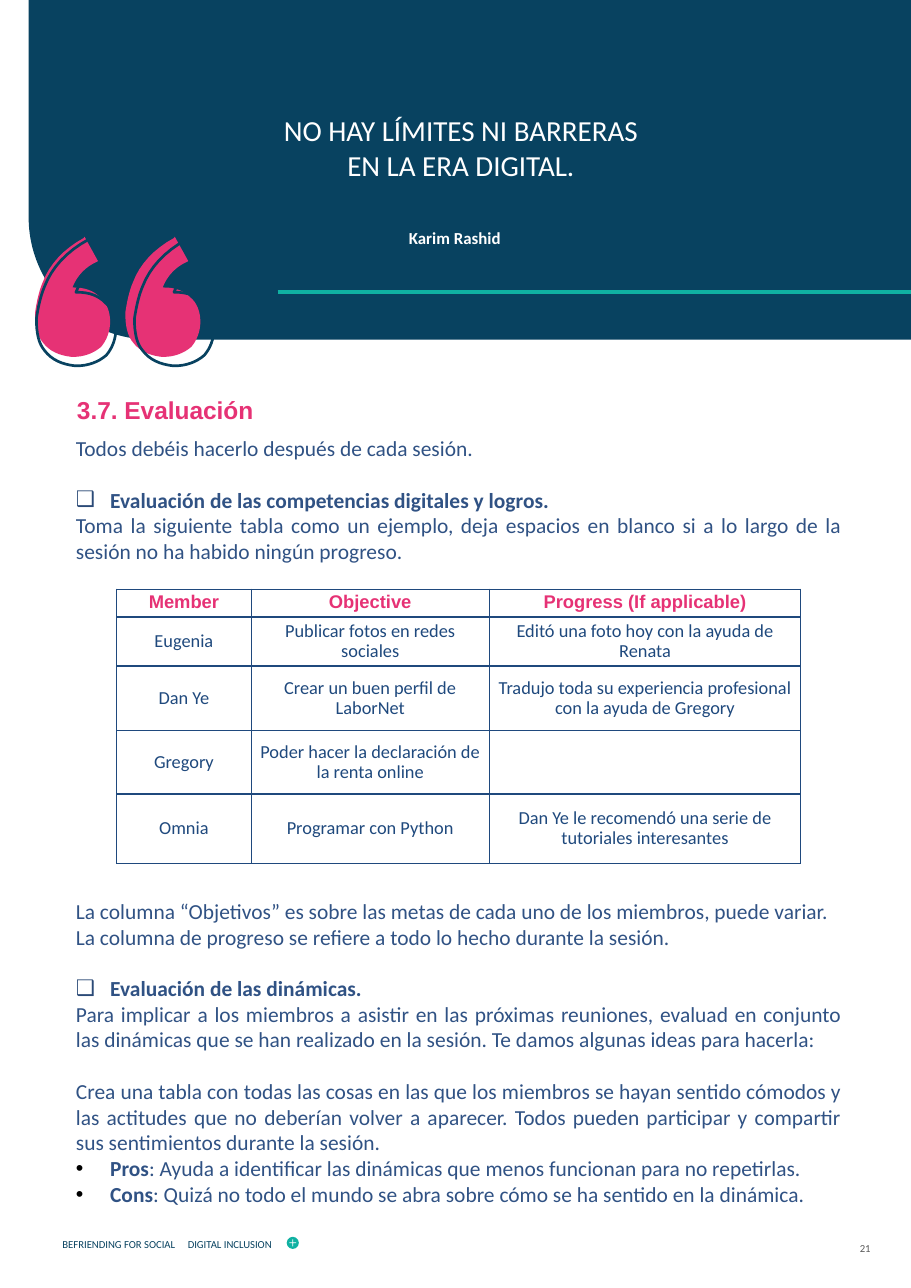
"""Builds the evaluation page of the digital inclusion guide."""
from lxml import etree
from pptx import Presentation
from pptx.dml.color import RGBColor
from pptx.enum.shapes import MSO_CONNECTOR, MSO_SHAPE
from pptx.enum.text import MSO_ANCHOR, PP_ALIGN
from pptx.oxml.ns import qn
from pptx.util import Cm, Pt

LEFT, CENTER, RIGHT = PP_ALIGN.LEFT, PP_ALIGN.CENTER, PP_ALIGN.RIGHT
JUSTIFY = PP_ALIGN.JUSTIFY
TOP, MIDDLE = MSO_ANCHOR.TOP, MSO_ANCHOR.MIDDLE
COLORS = {
    "navy": "084260", "teal": "10B1A2", "pink": "E63275", "white": "FFFFFF",
    "body": "305284", "table": "1F497D", "box": "2B4A77", "dot": "000000",
    "page": "595959",
}
BODY_LINE = Pt(16.8)
TITLE_ONLY = 5

QUOTE_MARK = [
    (0.89, 2.77), (0.86, 2.77, 0.86, 2.77, 0.84, 2.77),
    (0.56, 2.74, 0.33, 2.64, 0.18, 2.44), (0.05, 2.29, 0, 2.06, 0, 1.75),
    (0.03, 1.55, 0.08, 1.27, 0.18, 1.04), (0.33, 0.64, 0.66, 0.28, 1.12, 0.03),
    (1.14, 0), (1.45, 0.56), (1.42, 0.58),
    (1.17, 0.69, 0.97, 0.89, 0.86, 1.17), (0.89, 1.17),
    (1.14, 1.17, 1.35, 1.24, 1.5, 1.4), (1.65, 1.52, 1.73, 1.73, 1.73, 1.96),
    (1.73, 2.18, 1.65, 2.39, 1.52, 2.54), (1.35, 2.69, 1.12, 2.77, 0.89, 2.77),
]

BEFORE_TABLE = [
    ("", False, [("Todos debéis hacerlo después de cada sesión.", False)]),
    ("❑", True, [("Evaluación de las competencias digitales y logros.", True)]),
    ("", False, [("Toma la siguiente tabla como un ejemplo, deja espacios en blanco si a lo "
                  "largo de la sesión no ha habido ningún progreso.", False)]),
]
AFTER_TABLE = [
    ("", False, [("La columna “Objetivos” es sobre las metas de cada uno de los miembros, "
                  "puede variar.", False)]),
    ("", False, [("La columna de progreso se refiere a todo lo hecho durante la sesión.", False)]),
    ("❑", True, [("Evaluación de las dinámicas.", True)]),
    ("", False, [("Para implicar a los miembros a asistir en las próximas reuniones, evaluad en "
                  "conjunto las dinámicas que se han realizado en la sesión. Te damos algunas "
                  "ideas para hacerla:", False)]),
    ("", True, [("Crea una tabla con todas las cosas en las que los miembros se hayan sentido "
                 "cómodos y las actitudes que no deberían volver a aparecer. Todos pueden "
                 "participar y compartir sus sentimientos durante la sesión.", False)]),
    ("•", False, [("Pros", True), (": Ayuda a identificar las dinámicas que menos funcionan para "
                                   "no repetirlas.", False)]),
    ("•", False, [("Cons", True), (": Quizá no todo el mundo se abra sobre cómo se ha sentido en "
                                   "la dinámica.", False)]),
]

MEMBER_ROWS = [
    ("Member", "Objective", "Progress (If applicable)"),
    ("Eugenia", "Publicar fotos en redes sociales", "Editó una foto hoy con la ayuda de Renata"),
    ("Dan Ye", "Crear un buen perfil de LaborNet",
     "Tradujo toda su experiencia profesional con la ayuda de Gregory"),
    ("Gregory", "Poder hacer la declaración de la renta online", ""),
    ("Omnia", "Programar con Python", "Dan Ye le recomendó una serie de tutoriales interesantes"),
]
COLUMN_WIDTHS = (3.1, 5.49, 7.18)
ROW_HEIGHTS = (0.64, 1.13, 1.49, 1.46, 1.6)


def color(name):
    """Return the named colour."""
    return RGBColor.from_string(COLORS[name])


def add_span(para, text, size, tint, bold=False, font="Calibri"):
    """Add one formatted run to a paragraph."""
    span = para.add_run()
    span.text = text
    span.font.name, span.font.size, span.font.bold = font, Pt(size), bold
    span.font.color.rgb = color(tint)


def add_box(page, left, top, width, height, anchor=TOP):
    """Add a wrapping text box and return its text frame."""
    frame = page.shapes.add_textbox(Cm(left), Cm(top), Cm(width), Cm(height)).text_frame
    frame.word_wrap = True
    frame.vertical_anchor = anchor
    return frame


def add_label(page, place, lines, size, tint, align=LEFT, anchor=MIDDLE, bold=False):
    """Add a text box whose lines share one format."""
    frame = add_box(page, *place, anchor)
    for index, line in enumerate(lines):
        para = frame.add_paragraph() if index else frame.paragraphs[0]
        para.alignment = align
        add_span(para, line, size, tint, bold)


def add_bullet(para, symbol):
    """Give a paragraph a hanging bullet."""
    props = para._p.get_or_add_pPr()
    props.set("marL", str(Cm(0.79)))
    props.set("indent", str(-Cm(0.79)))
    tint = etree.SubElement(props, qn("a:buClr"))
    etree.SubElement(tint, qn("a:srgbClr"), val=COLORS["box" if symbol == "❑" else "dot"])
    etree.SubElement(props, qn("a:buFont"), typeface="Arial")
    etree.SubElement(props, qn("a:buChar"), char=symbol)


def add_body(page, top, height, items):
    """Add justified body text with bullets and gaps."""
    frame = add_box(page, 1.5, top, 18.16, height)
    for index, (symbol, gap, spans) in enumerate(items):
        para = frame.add_paragraph() if index else frame.paragraphs[0]
        if symbol:
            add_bullet(para, symbol)
        para.alignment = JUSTIFY
        para.line_spacing = BODY_LINE
        if gap:
            para.space_before = BODY_LINE
        for text, bold in spans:
            add_span(para, text, 14, "body", bold)


def add_solid(page, preset, left, top, width, height, tint):
    """Add a preset shape with a plain fill."""
    shape = page.shapes.add_shape(preset, Cm(left), Cm(top), Cm(width), Cm(height))
    shape.shadow.inherit = False
    shape.fill.solid()
    shape.fill.fore_color.rgb = color(tint)
    shape.line.fill.background()
    return shape


def trace(segments, steps=8):
    """Turn straight and cubic segments into a list of points."""
    points = [segments[0]]
    for segment in segments[1:]:
        if len(segment) == 2:
            points.append(segment)
            continue
        knots = [points[-1], segment[:2], segment[2:4], segment[4:]]
        for step in range(1, steps + 1):
            t = step / steps
            weights = ((1 - t) ** 3, 3 * t * (1 - t) ** 2, 3 * t * t * (1 - t), t ** 3)
            points.append(tuple(sum(w * knot[axis] for w, knot in zip(weights, knots))
                                for axis in (0, 1)))
    return points


def add_quote_mark(page, left, top, scale, outlined):
    """Add one opening quote mark, filled or outlined."""
    points = [(Cm(left + x * scale), Cm(top + y * scale)) for x, y in trace(QUOTE_MARK)]
    builder = page.shapes.build_freeform(*points[0])
    builder.add_line_segments(points[1:], close=True)
    mark = builder.convert_to_shape()
    mark.shadow.inherit = False
    if outlined:
        mark.fill.background()
        mark.line.color.rgb = color("navy")
        mark.line.width = Pt(1.75)
    else:
        mark.fill.solid()
        mark.fill.fore_color.rgb = color("pink")
        mark.line.fill.background()


def add_rule(page, left, right, y):
    """Add the teal rule of the banner."""
    rule = page.shapes.add_connector(MSO_CONNECTOR.STRAIGHT, Cm(left), Cm(y), Cm(right), Cm(y))
    rule.line.color.rgb = color("teal")
    rule.line.width = Pt(3)
    etree.SubElement(rule._element.spPr, qn("a:effectLst"))


def format_cell(cell, text, header):
    """Fill one table cell and draw its borders."""
    props = cell._tc.get_or_add_tcPr()
    for side in ("a:lnL", "a:lnR", "a:lnT", "a:lnB"):
        border = etree.SubElement(props, qn(side), w=str(Pt(1)))
        fill = etree.SubElement(border, qn("a:solidFill"))
        etree.SubElement(fill, qn("a:srgbClr"), val=COLORS["table"])
    cell.fill.background()
    cell.vertical_anchor = MIDDLE
    cell.margin_left = cell.margin_right = Cm(0.18)
    cell.margin_top = cell.margin_bottom = 0
    para = cell.text_frame.paragraphs[0]
    para.alignment = CENTER
    para.line_spacing = 0.9
    if text:
        add_span(para, text, 12, "pink" if header else "table", header,
                 "Arial" if header else "Calibri")


def add_member_table(page):
    """Add the table of members, objectives and progress."""
    table = page.shapes.add_table(len(ROW_HEIGHTS), len(COLUMN_WIDTHS), Cm(2.69), Cm(13.59),
                                  Cm(sum(COLUMN_WIDTHS)), Cm(sum(ROW_HEIGHTS))).table
    table.horz_banding = False
    for column, width in zip(table.columns, COLUMN_WIDTHS):
        column.width = Cm(width)
    for index, (row, height, texts) in enumerate(zip(table.rows, ROW_HEIGHTS, MEMBER_ROWS)):
        row.height = Cm(height)
        for cell, text in zip(row.cells, texts):
            format_cell(cell, text, index == 0)


def set_title(page, text):
    """Place and format the section title."""
    title = page.shapes.title
    title.left, title.top, title.width, title.height = Cm(1.52), Cm(8.99), Cm(8.97), Cm(1)
    title.text_frame.vertical_anchor = TOP
    para = title.text_frame.paragraphs[0]
    para.alignment = LEFT
    add_span(para, text, 16, "pink", True, "Arial")


def add_banner(page):
    """Add the banner with its quotation."""
    banner = add_solid(page, MSO_SHAPE.ROUND_1_RECTANGLE, 0.66, 0, 20.34, 7.83, "navy")
    banner.rotation = 180
    banner.adjustments[0] = 0.36
    add_rule(page, 6.4, 21, 6.73)
    add_label(page, (5.28, 1.45, 10.69, 3.89),
              ["NO HAY LÍMITES NI BARRERAS", "EN LA ERA DIGITAL."], 19, "white", CENTER)
    add_label(page, (3.5, 5.13, 13.97, 0.76), ["Karim Rashid"], 11, "white", CENTER, TOP, True)
    for left, top, pitch, scale, outlined in ((0.81, 5.46, 2.08, 1, False),
                                              (0.84, 5.5, 2.26, 1.06, True)):
        for index in range(2):
            add_quote_mark(page, left + index * pitch, top, scale, outlined)


def add_footer(page):
    """Add the running footer and page number."""
    for left, text in ((1.19, "BEFRIENDING FOR SOCIAL"), (4.08, "DIGITAL INCLUSION")):
        add_label(page, (left, 28.17, 3.5, 1.02), [text], 7, "navy")
    add_solid(page, MSO_SHAPE.OVAL, 6.61, 28.52, 0.28, 0.28, "teal")
    plus = add_solid(page, MSO_SHAPE.CROSS, 6.67, 28.58, 0.16, 0.16, "white")
    plus.adjustments[0] = 0.44
    add_label(page, (19.15, 28.14, 1.17, 1.3), ["21"], 7, "page", RIGHT)


def main():
    """Build and save the deck."""
    deck = Presentation()
    deck.slide_width, deck.slide_height = Cm(21), Cm(29.7)
    page = deck.slides.add_slide(deck.slide_layouts[TITLE_ONLY])
    add_banner(page)
    set_title(page, "3.7. Evaluación")
    add_body(page, 9.91, 3.2, BEFORE_TABLE)
    add_member_table(page)
    add_body(page, 20.58, 7.5, AFTER_TABLE)
    add_footer(page)
    deck.save("out.pptx")


if __name__ == "__main__":
    main()
